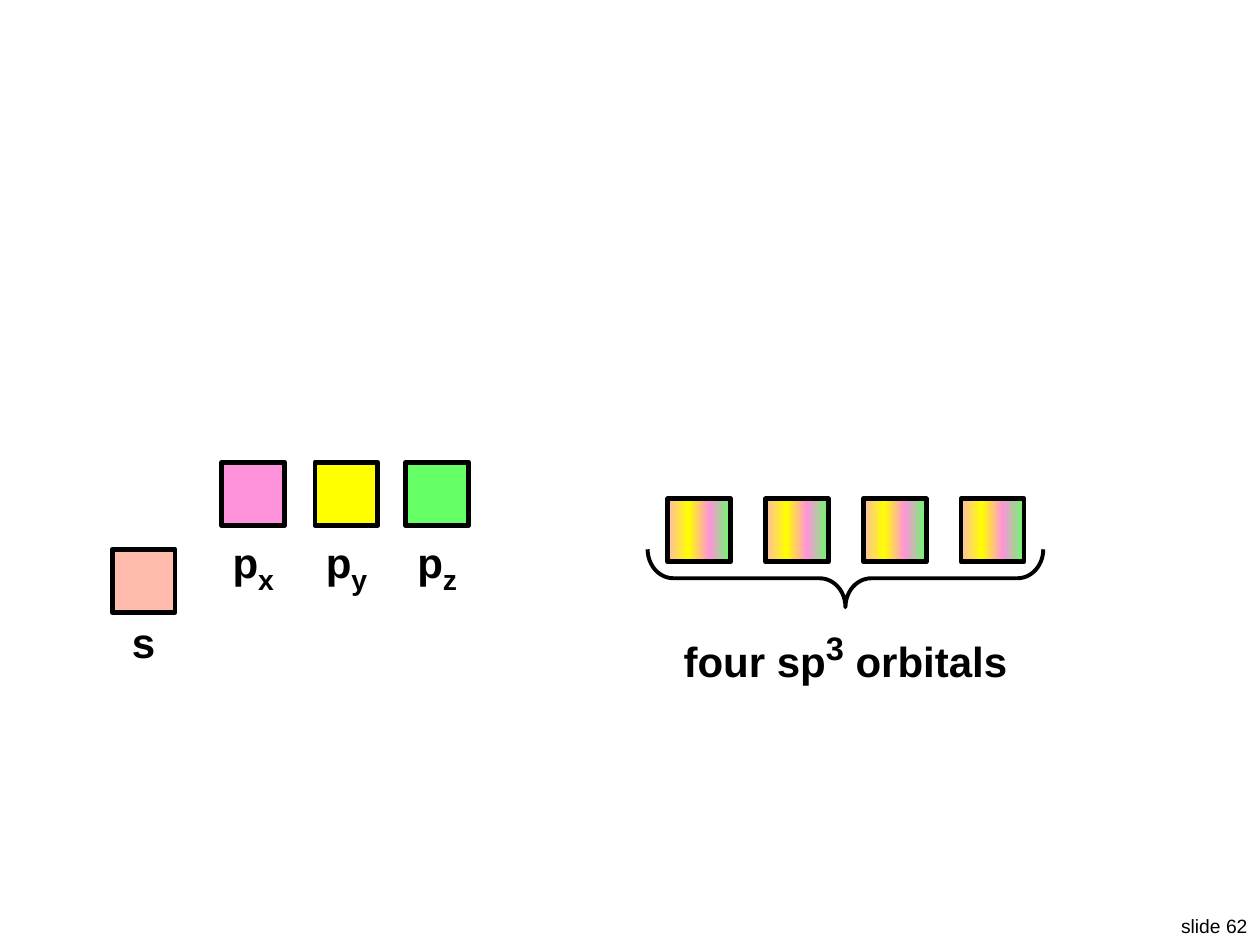
from dataclasses import dataclass

from lxml.etree import SubElement
from pptx import Presentation
from pptx.dml.color import RGBColor
from pptx.enum.shapes import MSO_SHAPE
from pptx.enum.text import MSO_AUTO_SIZE, PP_ALIGN
from pptx.oxml.ns import qn
from pptx.shapes.shapetree import GroupShapes
from pptx.util import Inches, Pt

BLACK = "000000"
PEACH, YELLOW, PINK, GREEN = "FFBBAB", "FFFF00", "FF93DB", "66FF66"
BLEND = {0: PEACH, 33: YELLOW, 66: PINK, 100: GREEN}
SIDE = 0.5


@dataclass
class Part:
    """A stretch of text with its size and baseline shift in percent."""
    text: str
    size: int = 24
    shift: int = 0


@dataclass
class Orbital:
    """A pure atomic orbital: box position, colour and label."""
    left: float
    top: float
    color: str
    label: list[Part]


ORBITALS = [
    Orbital(0.89, 4.36, PEACH, [Part("s")]),
    Orbital(1.76, 3.67, PINK, [Part("p"), Part("x", 28, -25)]),
    Orbital(2.5, 3.67, YELLOW, [Part("p"), Part("y", 28, -25)]),
    Orbital(3.22, 3.67, GREEN, [Part("p"), Part("z", 28, -25)]),
]
HYBRID = [Part("four sp"), Part("3", 32, 30), Part(" orbitals")]


def paint(color: str) -> RGBColor:
    """Turn a hex string into a colour."""
    return RGBColor.from_string(color)


def draw_text(shapes, left: float, top: float, width: float, height: float,
              parts: list[Part], bold: bool = True,
              align: PP_ALIGN = PP_ALIGN.CENTER) -> None:
    """Write one unwrapped line made of the given parts."""
    frame = shapes.add_textbox(Inches(left), Inches(top),
                               Inches(width), Inches(height)).text_frame
    frame.word_wrap = False
    frame.auto_size = MSO_AUTO_SIZE.SHAPE_TO_FIT_TEXT
    line = frame.paragraphs[0]
    line.alignment = align
    for part in parts:
        run = line.add_run()
        run.text = part.text
        font = run.font
        font.name, font.size, font.bold = "Arial", Pt(part.size), bold
        font.color.rgb = paint(BLACK)
        if part.shift:
            run._r.get_or_add_rPr().set("baseline", str(part.shift * 1000))


def draw_box(shapes: GroupShapes, left: float, top: float):
    """Draw an outlined orbital box and return it."""
    box = shapes.add_shape(MSO_SHAPE.RECTANGLE, Inches(left), Inches(top),
                           Inches(SIDE), Inches(SIDE))
    box.shadow.inherit = False
    box.line.color.rgb = paint(BLACK)
    box.line.width = Pt(2.75)
    return box


def draw_pure(shapes: GroupShapes, item: Orbital) -> None:
    """Draw a plain orbital with its label centred below."""
    box = draw_box(shapes, item.left, item.top)
    box.fill.solid()
    box.fill.fore_color.rgb = paint(item.color)
    width = 0.55
    draw_text(shapes, item.left + (SIDE - width) / 2, item.top + 0.48,
              width, 0.5, item.label)


def draw_mixed(shapes: GroupShapes, left: float, top: float) -> None:
    """Draw a hybrid orbital that blends the four colours."""
    box = draw_box(shapes, left, top)
    box.fill.gradient()
    box.fill.gradient_angle = 0
    stops = box._element.spPr.find(qn("a:gradFill")).find(qn("a:gsLst"))
    for stop in list(stops):
        stops.remove(stop)
    for place, color in BLEND.items():
        stop = SubElement(stops, qn("a:gs"), pos=str(place * 1000))
        SubElement(stop, qn("a:srgbClr"), val=color)


def draw_brace(shapes: GroupShapes) -> None:
    """Draw the brace that opens upward under the hybrid orbitals."""
    brace = shapes.add_shape(MSO_SHAPE.RIGHT_BRACE, Inches(6.48), Inches(3.02),
                             Inches(0.46), Inches(3.14))
    brace.rotation = 90
    brace.adjustments[0] = 0.445
    brace.adjustments[1] = 0.5
    brace.shadow.inherit = False
    brace.fill.background()
    brace.line.color.rgb = paint(BLACK)
    brace.line.width = Pt(2.25)


def main() -> None:
    """Build the orbital mixing slide."""
    deck = Presentation()
    deck.slide_width, deck.slide_height = Inches(10), Inches(7.5)
    slide = deck.slides.add_slide(deck.slide_layouts[6])
    draw_text(slide.shapes, 9.25, 7.21, 0.75, 0.29, [Part("slide 62", 11)],
              bold=False, align=PP_ALIGN.RIGHT)

    pure = slide.shapes.add_group_shape().shapes
    for item in ORBITALS:
        draw_pure(pure, item)

    mixed = slide.shapes.add_group_shape().shapes
    draw_text(mixed, 5.29, 4.88, 2.84, 0.5, HYBRID)
    for index in range(4):
        draw_mixed(mixed, 5.3 + index * 0.776, 3.96)
    draw_brace(mixed)
    deck.save("out.pptx")


if __name__ == "__main__":
    main()
